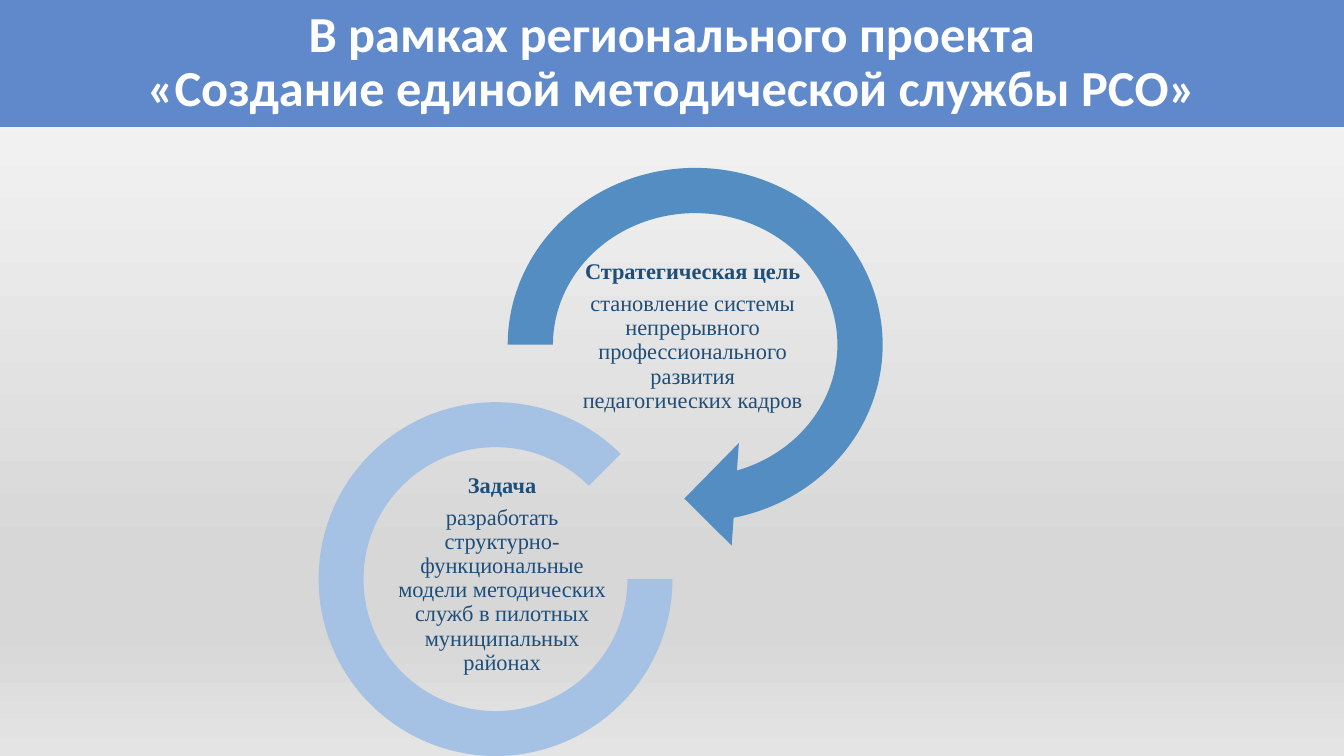
from copy import deepcopy
from dataclasses import dataclass

from pptx import Presentation
from pptx.dml.color import RGBColor
from pptx.enum.shapes import MSO_SHAPE
from pptx.enum.text import MSO_ANCHOR, PP_ALIGN
from pptx.oxml.ns import qn
from pptx.util import Inches, Pt

RECTANGLE = MSO_SHAPE.RECTANGLE
CIRCULAR_ARROW = MSO_SHAPE.CIRCULAR_ARROW
BLOCK_ARC = MSO_SHAPE.BLOCK_ARC
MIDDLE = MSO_ANCHOR.MIDDLE
CENTER = PP_ALIGN.CENTER


@dataclass(frozen=True)
class Theme:
    banner: str = "6089CC"
    goal: str = "538DC1"
    task: str = "A5C1E3"
    title_text: str = "FFFFFF"
    body_text: str = "1F4E79"
    backdrop: tuple = ((0, "FAFAFA"), (0.74, "D7D7D7"), (0.83, "D7D7D7"), (1, "E4E4E4"))
    title_font: str = "Calibri"
    body_font: str = "Times New Roman"
    title_size: int = 36
    body_size: int = 16


theme = Theme()


def add_filled_shape(kind, box, color):
    shape = slide.shapes.add_shape(kind, *(Inches(length) for length in box))
    shape.shadow.inherit = False
    shape.fill.solid()
    shape.fill.fore_color.rgb = RGBColor.from_string(color)
    shape.line.fill.background()
    return shape


def write_centered(frame, lines, font_name, size, color, gap=0):
    """Fill the frame with (text, bold) lines, centred both ways."""
    frame.word_wrap = True
    frame.vertical_anchor = MIDDLE
    for index, (text, bold) in enumerate(lines):
        paragraph = frame.add_paragraph() if index else frame.paragraphs[0]
        paragraph.text = text
        paragraph.alignment = CENTER
        paragraph.line_spacing = 0.9
        paragraph.space_after = Pt(gap)
        paragraph.font.name = font_name
        paragraph.font.size = Pt(size)
        paragraph.font.bold = bold
        paragraph.font.color.rgb = RGBColor.from_string(color)


presentation = Presentation()
presentation.slide_width = Inches(13.33)
presentation.slide_height = Inches(7.5)
slide = presentation.slides.add_slide(presentation.slide_layouts[6])

# Background: four grey stops from top to bottom
backdrop = slide.background.fill
backdrop.gradient()
backdrop.gradient_angle = 270
stop_list = next(slide.element.iter(qn("a:gsLst")))
while len(stop_list) < len(theme.backdrop):
    stop_list.append(deepcopy(stop_list[0]))
for stop, (position, color) in zip(backdrop.gradient_stops, theme.backdrop):
    stop.position = position
    stop.color.rgb = RGBColor.from_string(color)

# Title banner
banner = add_filled_shape(RECTANGLE, (0, 0, 13.33, 1.26), theme.banner)
title_lines = [
    ("В рамках регионального проекта", True),
    ("«Создание единой методической службы РСО»", True),
]
write_centered(banner.text_frame, title_lines, theme.title_font, theme.title_size, theme.title_text)

# Goal and task: a ring with its label inside
rings = [
    (CIRCULAR_ARROW, (4.75, 1.38, 4.29, 4.08), (0.11, 11.42, 45, 108, 0.125), theme.goal,
     (5.73, 2.77, 2.28, 1.14), "Стратегическая цель",
     "становление системы непрерывного профессионального развития педагогических кадров"),
    (BLOCK_ARC, (3.16, 3.99, 3.51, 3.51), (0, 189, 0.127), theme.task,
     (3.84, 4.87, 2.28, 1.66), "Задача",
     "разработать структурно-функциональные модели методических служб "
     "в пилотных муниципальных районах"),
]
for kind, ring_box, adjustments, color, label_box, heading, statement in rings:
    ring = add_filled_shape(kind, ring_box, color)
    for index, value in enumerate(adjustments):
        ring.adjustments[index] = value

    label = slide.shapes.add_textbox(*(Inches(length) for length in label_box)).text_frame
    label.margin_left = label.margin_right = Inches(0.01)
    label.margin_top = label.margin_bottom = Inches(0.01)
    write_centered(label, [(heading, True), (statement, False)],
                   theme.body_font, theme.body_size, theme.body_text, gap=5.6)

presentation.save("out.pptx")
